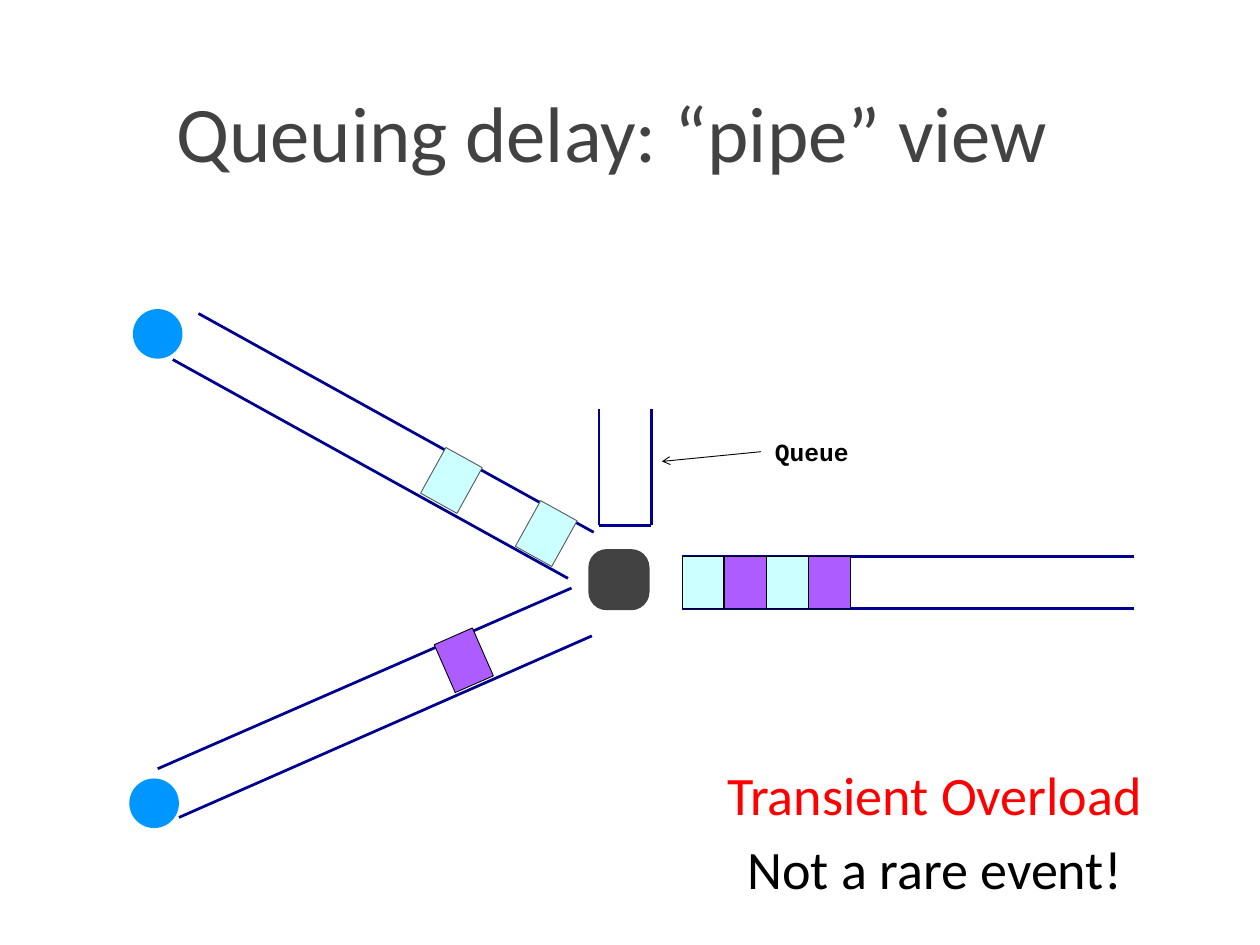
from lxml.etree import SubElement
from pptx import Presentation
from pptx.dml.color import RGBColor
from pptx.enum.shapes import MSO_CONNECTOR, MSO_SHAPE
from pptx.enum.text import MSO_ANCHOR, PP_ALIGN
from pptx.oxml.ns import qn
from pptx.util import Inches, Pt

NAVY = RGBColor(0x00, 0x00, 0x90)
CYAN = RGBColor(0xCC, 0xFF, 0xFF)
PURPLE = RGBColor(0xAD, 0x5C, 0xFF)
BLUE = RGBColor(0x00, 0x96, 0xFF)
CHARCOAL = RGBColor(0x42, 0x42, 0x42)
GRAY = RGBColor(0x59, 0x59, 0x59)
RED = RGBColor(0xFF, 0x00, 0x00)
BLACK = RGBColor(0x00, 0x00, 0x00)

TITLE = "Queuing delay: “pipe” view"
QUEUE_LABEL = "Queue"
CAPTIONS = [("Transient Overload", RED, 8.53), ("Not a rare event!", BLACK, 9.36)]
PIPE_WALLS = [
    (2.24, 3.54, 6.7, 6.01), (1.95, 4.06, 6.41, 6.53),
    (1.78, 8.68, 6.45, 6.64), (2.02, 9.23, 6.68, 7.18),
    (6.76, 4.62, 6.76, 5.93), (7.35, 4.62, 7.35, 5.93), (6.76, 5.93, 7.35, 5.93),
    (7.7, 6.28, 12.8, 6.28), (7.7, 6.87, 12.8, 6.87),
]
INCOMING_PACKETS = [
    (5.93, 5.73, 29, CYAN, GRAY),
    (4.86, 5.13, 29, CYAN, GRAY),
    (5, 7.16, 336.3, PURPLE, BLACK),
]
OUTGOING_COLORS = [CYAN, PURPLE, CYAN, PURPLE]
OUTGOING_LEFT, OUTGOING_TOP, PACKET_PITCH = 7.7, 6.28, 0.475
PACKET_WIDTH, PACKET_HEIGHT = 0.47, 0.59
HOSTS = [(1.5, 3.49), (1.46, 8.79)]
HOST_SIZE = 0.56


def add_line(slide, ends, color, width):
    line = slide.shapes.add_connector(MSO_CONNECTOR.STRAIGHT, *map(Inches, ends))
    line.line.color.rgb = color
    line.line.width = Pt(width)
    SubElement(line._element.spPr, qn("a:effectLst"))
    return line


def add_block(slide, kind, box, fill, outline=None):
    block = slide.shapes.add_shape(kind, *map(Inches, box))
    block.shadow.inherit = False
    block.fill.solid()
    block.fill.fore_color.rgb = fill
    if outline is None:
        block.line.fill.background()
    else:
        block.line.color.rgb = outline
        block.line.width = Pt(0.75)
    return block


def add_packet(slide, left, top, rotation, fill, outline):
    box = (left, top, PACKET_WIDTH, PACKET_HEIGHT)
    add_block(slide, MSO_SHAPE.RECTANGLE, box, fill, outline).rotation = rotation


def write_text(shape, text, size, color, font, align=PP_ALIGN.CENTER, bold=False, wrap=True):
    frame = shape.text_frame
    frame.text = text
    frame.word_wrap = wrap
    frame.margin_left = frame.margin_right = Inches(0.14)
    frame.margin_top = frame.margin_bottom = Inches(0.07)
    paragraph = frame.paragraphs[0]
    paragraph.alignment = align
    run_font = paragraph.runs[0].font
    run_font.name, run_font.size, run_font.bold = font, Pt(size), bold
    run_font.color.rgb = color


def add_label(slide, box, *style, **options):
    write_text(slide.shapes.add_textbox(*map(Inches, box)), *style, **options)


def main():
    """Build the slide on queuing delay seen as pipes."""
    deck = Presentation()
    deck.slide_width, deck.slide_height = Inches(14.22), Inches(10.67)
    slide = deck.slides.add_slide(deck.slide_layouts[5])

    title = slide.shapes.title
    title.left, title.top = Inches(0.6), Inches(0.35)
    title.width, title.height = Inches(12.61), Inches(1.73)
    write_text(title, TITLE, 64, CHARCOAL, "Calibri")
    title.text_frame.vertical_anchor = MSO_ANCHOR.BOTTOM

    for wall in PIPE_WALLS:
        add_line(slide, wall, NAVY, 2.25)
    for packet in INCOMING_PACKETS:
        add_packet(slide, *packet)
    for position, color in enumerate(OUTGOING_COLORS):
        left = OUTGOING_LEFT + position * PACKET_PITCH
        add_packet(slide, left, OUTGOING_TOP, 0, color, BLACK)

    for left, top in HOSTS:
        add_block(slide, MSO_SHAPE.OVAL, (left, top, HOST_SIZE, HOST_SIZE), BLUE)
    router = add_block(slide, MSO_SHAPE.ROUNDED_RECTANGLE, (6.64, 6.2, 0.69, 0.69), CHARCOAL)
    router.adjustments[0] = 0.3

    add_label(slide, (8.59, 4.86, 1.13, 0.48), QUEUE_LABEL, 20, BLACK, "Courier New",
              align=PP_ALIGN.RIGHT, bold=True, wrap=False)
    pointer = add_line(slide, (8.59, 5.1, 7.47, 5.21), BLACK, 0.75)
    SubElement(pointer.line._get_or_add_ln(), qn("a:tailEnd"), type="arrow")

    for text, color, top in CAPTIONS:
        add_label(slide, (7.23, top, 6.64, 0.92), text, 44, color, "Calibri")

    deck.save("out.pptx")


if __name__ == "__main__":
    main()
